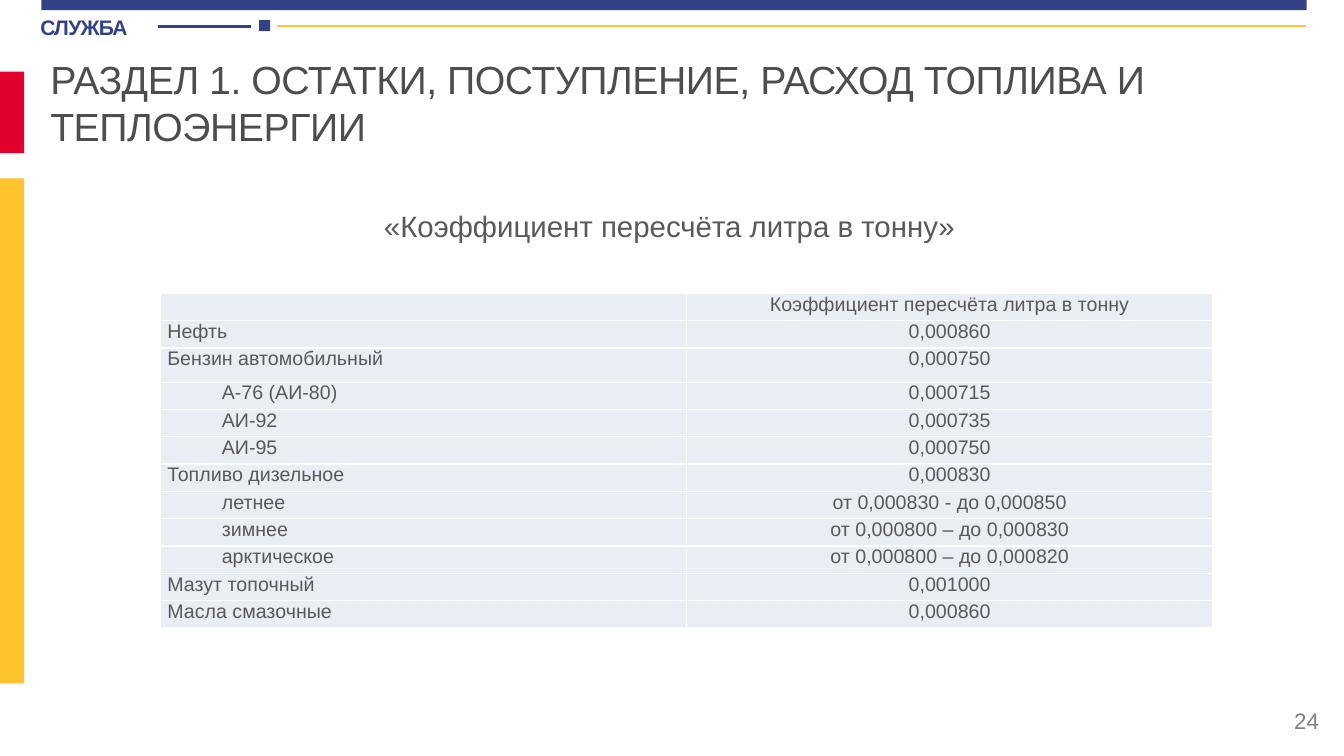
from pptx import Presentation
from pptx.dml.color import RGBColor
from pptx.enum.shapes import MSO_CONNECTOR, MSO_SHAPE
from pptx.enum.text import MSO_ANCHOR, PP_ALIGN
from pptx.oxml.ns import qn
from pptx.util import Inches, Pt
from lxml.etree import SubElement

HEX = {"blue": "334286", "red": "E1002B", "gold": "FFC32E", "white": "FFFFFF",
       "title": "4D4D4D", "text": "595959", "page": "808080", "cell": "E9EDF4"}

OFFICE = "СЛУЖБА"
TITLE = "РАЗДЕЛ 1. ОСТАТКИ, ПОСТУПЛЕНИЕ, РАСХОД ТОПЛИВА И ТЕПЛОЭНЕРГИИ"
HEAD = "«Коэффициент пересчёта литра в тонну»"
PAGE = "24"

# Indent level, fuel, factor
FUELS = [
    (0, "", "Коэффициент пересчёта литра в тонну"),
    (0, "Нефть", "0,000860"),
    (0, "Бензин автомобильный", "0,000750"),
    (1, "А-76 (АИ-80)", "0,000715"),
    (1, "АИ-92", "0,000735"),
    (1, "АИ-95", "0,000750"),
    (0, "Топливо дизельное", "0,000830"),
    (1, "летнее", "от 0,000830 - до 0,000850"),
    (1, "зимнее", "от 0,000800 – до 0,000830"),
    (1, "арктическое", "от 0,000800 – до 0,000820"),
    (0, "Мазут топочный", "0,001000"),
    (0, "Масла смазочные", "0,000860"),
]
TALL, TALL_H = 2, 0.34
GRID = (1.59, 2.91, 10.44, 3.32)

# Left, top, width, height, colour
BARS = [(0.41, 0, 12.55, 0.1, "blue"),
        (0, 0.71, 0.24, 0.81, "red"),
        (0, 1.77, 0.24, 5.01, "gold")]
# From x, to x, colour, weight
RULES = [(1.57, 2.69, "blue", 2), (2.69, 12.95, "gold", 1.5)]
RULE_Y = 0.26
# The white gap between the rules and the square inside it
MARKS = [(2.49, 0.2, 0.26, 0.12, "white"), (2.57, 0.2, 0.11, 0.11, "blue")]


def color(name):
    return RGBColor.from_string(HEX[name])


def write(frame, text, size, tint, align=PP_ALIGN.LEFT, bold=False,
          track=0, indent=0, before=0):
    para = frame.paragraphs[0]
    para.alignment = align
    if before:
        para.space_before = Pt(before)
    if indent:
        props = para._p.get_or_add_pPr()
        props.set("marL", str(Inches(indent)))
        props.set("indent", "0")
    if not text:
        para._p.get_or_add_endParaRPr().set("sz", str(size * 100))
        return
    run = para.add_run()
    run.text = text
    font = run.font
    font.name, font.size, font.bold = "Arial", Pt(size), bold
    font.color.rgb = color(tint)
    if track:
        run._r.get_or_add_rPr().set("spc", str(round(track * 100)))


def inset(part, left, top, right, bottom):
    part.margin_left, part.margin_top = Inches(left), Inches(top)
    part.margin_right, part.margin_bottom = Inches(right), Inches(bottom)


def label(slide, box, text, size, tint, pad=(0.1, 0.05, 0.1, 0.05),
          anchor=MSO_ANCHOR.TOP, **style):
    frame = slide.shapes.add_textbox(*map(Inches, box)).text_frame
    frame.word_wrap = True
    frame.vertical_anchor = anchor
    inset(frame, *pad)
    write(frame, text, size, tint, **style)


def block(slide, left, top, width, height, tint):
    box = slide.shapes.add_shape(MSO_SHAPE.RECTANGLE,
                                 *map(Inches, (left, top, width, height)))
    box.shadow.inherit = False
    box.fill.solid()
    box.fill.fore_color.rgb = color(tint)
    box.line.fill.background()


def rule(slide, start, end, tint, weight):
    y = Inches(RULE_Y)
    line = slide.shapes.add_connector(MSO_CONNECTOR.STRAIGHT,
                                      Inches(start), y, Inches(end), y)
    line.line.color.rgb = color(tint)
    line.line.width = Pt(weight)
    SubElement(line._element.spPr, qn("a:effectLst"))


def border(cell):
    props = cell._tc.get_or_add_tcPr()
    for spot, side in enumerate(("lnL", "lnR", "lnT", "lnB")):
        edge = SubElement(props, qn("a:" + side), w=str(Pt(1)))
        fill = SubElement(edge, qn("a:solidFill"))
        SubElement(fill, qn("a:srgbClr"), val=HEX["white"])
        props.insert(spot, edge)


def fuel_table(slide):
    table = slide.shapes.add_table(len(FUELS), 2, *map(Inches, GRID)).table
    width, height = GRID[2:]
    short = (height - TALL_H) / (len(FUELS) - 1)
    for col in table.columns:
        col.width = Inches(width / 2)
    for i, (level, fuel, factor) in enumerate(FUELS):
        table.rows[i].height = Inches(TALL_H if i == TALL else short)
        for j, text in enumerate((fuel, factor)):
            cell = table.cell(i, j)
            inset(cell, 0.07, 0, 0.07, 0)
            cell.fill.solid()
            cell.fill.fore_color.rgb = color("cell")
            border(cell)
            write(cell.text_frame, text, 14, "text",
                  align=PP_ALIGN.CENTER if j else PP_ALIGN.JUSTIFY,
                  indent=0 if j else level * 0.54)


def main():
    deck = Presentation()
    deck.slide_width, deck.slide_height = Inches(13.33), Inches(7.5)
    slide = deck.slides.add_slide(deck.slide_layouts[6])

    # Frame: office, bars, rules
    label(slide, (0.39, 0.13, 1.15, 0.27), OFFICE, 15, "blue",
          pad=(0, 0.01, 0, 0), bold=True, track=-0.5, indent=0.01, before=1)
    for bar in BARS:
        block(slide, *bar)
    for part in RULES:
        rule(slide, *part)
    for mark in MARKS:
        block(slide, *mark)

    # Title, heading, page number
    label(slide, (0.36, 0.5, 12.62, 1.04), TITLE, 28, "title",
          track=-0.3, indent=0.04)
    label(slide, (1.14, 2.02, 11, 0.45), HEAD, 21, "text",
          align=PP_ALIGN.CENTER)
    label(slide, (10.18, 6.95, 3, 0.4), PAGE, 16, "page",
          anchor=MSO_ANCHOR.MIDDLE, align=PP_ALIGN.RIGHT)

    fuel_table(slide)
    deck.save("out.pptx")


if __name__ == "__main__":
    main()
